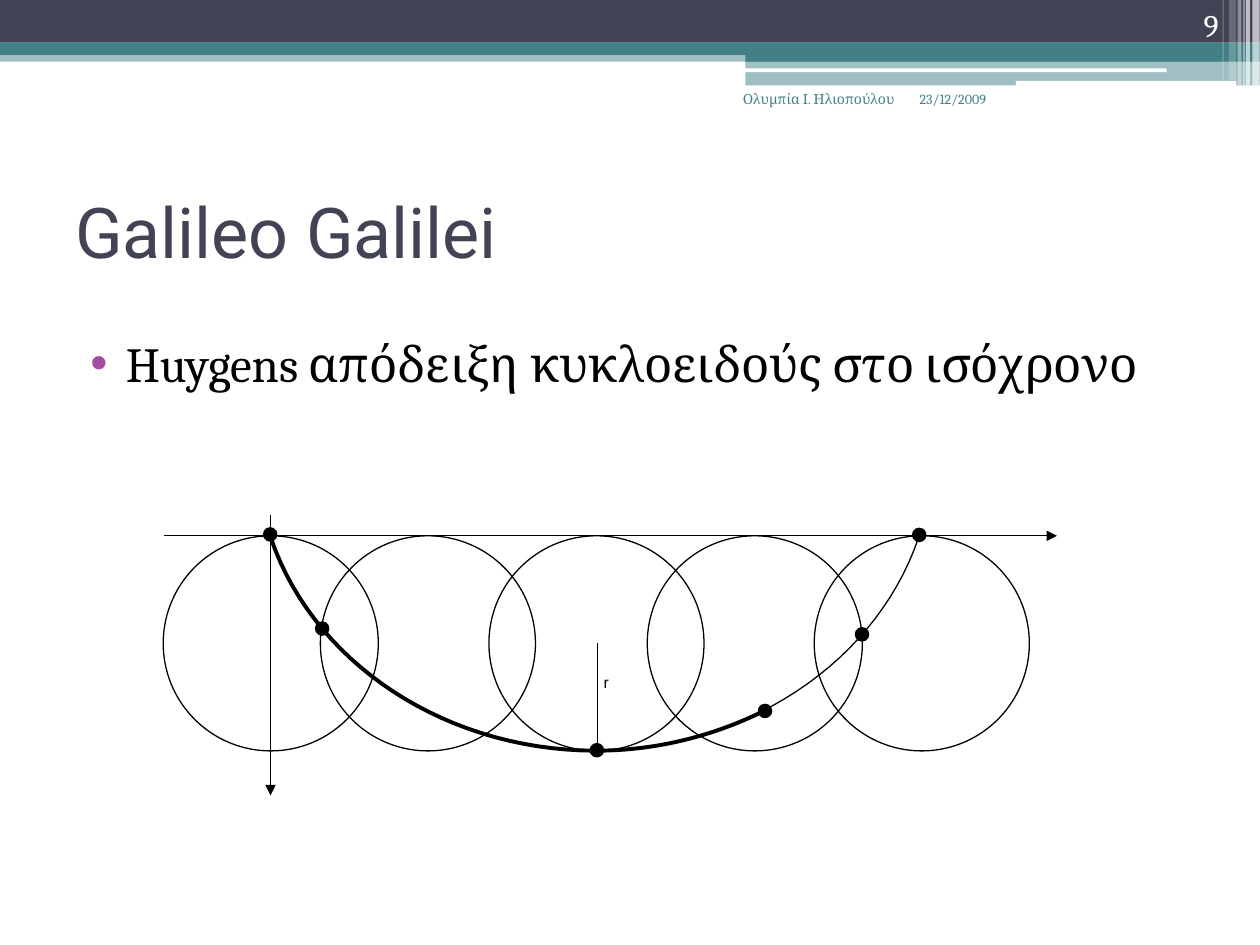
"""Build the Galileo Galilei slide with the cycloid drawing."""
from lxml import etree
from pptx import Presentation
from pptx.dml.color import RGBColor
from pptx.enum import shapes, text
from pptx.oxml.ns import qn
from pptx.util import Pt

MSO = shapes.MSO_SHAPE
ANC = text.MSO_ANCHOR
AL = text.PP_ALIGN
TEAL, NAVY, WHITE, BLACK = "438086", "424456", "FFFFFF", "000000"
rgb = RGBColor.from_string


def add_shape(kind, box, fill=None, alpha=100, line=None):
    """Add a preset shape with an optional fill, transparency and outline."""
    sp = s.shapes.add_shape(kind, *map(Pt, box))
    sp.shadow.inherit = False
    if fill:
        sp.fill.solid()
        sp.fill.fore_color.rgb = rgb(fill)
        if alpha < 100:
            clr = sp.fill._xPr.find(".//" + qn("a:srgbClr"))
            etree.SubElement(clr, qn("a:alpha")).set("val", str(alpha * 1000))
    else:
        sp.fill.background()
    if line:
        sp.line.color.rgb = rgb(line)
        sp.line.width = Pt(0.75)
    else:
        sp.line.fill.background()
    return sp


def add_text(box, words, size, font, color, align=AL.LEFT, anchor=ANC.TOP):
    """Add a wrapped text box with one run and return the box."""
    sp = s.shapes.add_textbox(*map(Pt, box))
    tf = sp.text_frame
    tf.word_wrap = True
    tf.vertical_anchor = anchor
    p = tf.paragraphs[0]
    p.alignment = align
    r = p.add_run()
    r.text = words
    r.font.size = Pt(size)
    r.font.name = font
    r.font.color.rgb = rgb(color)
    return sp


prs = Presentation()
prs.slide_width, prs.slide_height = Pt(720), Pt(540)
s = prs.slides.add_slide(prs.slide_layouts[6])

for box, color, alpha in [
    ((0, 28.8, 720, 6.5), TEAL, 50),
    ((0, 0, 720, 24.4), NAVY, 100),
    ((0, 24.2, 720, 7.2), TEAL, 100),
    ((426, 28.1, 294, 7.2), TEAL, 100),
    ((426, 34.6, 294, 14.2), TEAL, 50),
]:
    add_shape(MSO.RECTANGLE, box, color, alpha)

for box in [(425.5, 39.1, 241.2, 2.2), (580.5, 46.3, 126, 2.9)]:
    add_shape(MSO.ROUNDED_RECTANGLE, box, WHITE)

for x, w, h, alpha in [
    (715.6, 4.2, 49, 65), (712, 2.2, 49, 65), (710.5, 0.7, 49, 60),
    (707.2, 2.2, 49, 40), (702.2, 4.2, 46, 20), (698.6, 0.7, 46, 30),
]:
    add_shape(MSO.RECTANGLE, (x, 0, w, h), WHITE, alpha)

add_text((36, 90, 648, 84), "Galileo Galilei", 40, "Roboto", NAVY, anchor=ANC.MIDDLE)

sp = add_text((36, 177, 648, 340), "Huygens απόδειξη κυκλοειδούς στο ισόχρονο",
              28, "Cambria", BLACK)
p = sp.text_frame.paragraphs[0]
p.line_spacing = 1.3
p.space_before = Pt(3)
pPr = p._p.get_or_add_pPr()
pPr.set("marL", str(Pt(28.8)))
pPr.set("indent", str(Pt(-20.2)))
bullet_color = etree.SubElement(pPr, qn("a:buClr"))
etree.SubElement(bullet_color, qn("a:srgbClr")).set("val", "A04DA3")
etree.SubElement(pPr, qn("a:buFont")).set("typeface", "Arial")
etree.SubElement(pPr, qn("a:buChar")).set("char", "•")

add_text((518.4, 48.2, 75.6, 36), "23/12/2009", 8, "Cambria", TEAL)
add_text((414, 48.2, 104.4, 36), "Ολυμπία Ι. Ηλιοπούλου", 8, "Cambria", TEAL, AL.RIGHT)
add_text((643.7, 0, 59.8, 28.8), "9", 18, "Cambria", WHITE, AL.RIGHT, ANC.BOTTOM)

for x1, y1, x2, y2, arrow in [
    (93.6, 306.2, 604, 306.2, True),
    (154.6, 294.5, 154.6, 454.5, True),
    (341.3, 427.7, 341.3, 367.2, False),
]:
    cn = s.shapes.add_connector(shapes.MSO_CONNECTOR.STRAIGHT, *map(Pt, (x1, y1, x2, y2)))
    cn.line.color.rgb = rgb(BLACK)
    cn.line.width = Pt(0.75)
    if arrow:
        etree.SubElement(cn.line._get_or_add_ln(), qn("a:tailEnd")).set("type", "triangle")
    etree.SubElement(cn._element.spPr, qn("a:effectLst"))

for x in (93.3, 183.1, 279.4, 369.9, 465.3):
    add_shape(MSO.OVAL, (x, 306.2, 122.9, 122.9), line=BLACK)

steps = 30
for width, beziers in [
    (0.75, [[(524.9, 307.4), (500.4, 379.4), (424.8, 429), (339.6, 429)],
            [(339.6, 429), (254.2, 429), (178.6, 379.4), (154.3, 307.4)]]),
    (2.25, [[(435.6, 406.8), (406.1, 421.2), (373.7, 429), (340.6, 429)],
            [(340.6, 429), (254.9, 429), (179.3, 379.4), (154.8, 307.4)]]),
]:
    points = []
    for a, b, c, d in beziers:
        for t in (i / steps for i in range(steps + 1)):
            points.append(tuple(
                Pt((1 - t) ** 3 * a[k] + 3 * t * (1 - t) ** 2 * b[k]
                   + 3 * t * t * (1 - t) * c[k] + t ** 3 * d[k]) for k in (0, 1)))
    builder = s.shapes.build_freeform(*points[0])
    builder.add_line_segments(points[1:], close=False)
    curve = builder.convert_to_shape()
    curve.shadow.inherit = False
    curve.fill.background()
    curve.line.color.rgb = rgb(BLACK)
    curve.line.width = Pt(width)

tf = add_text((342, 381.6, 69.1, 25.9), "r", 9, "Arial", BLACK).text_frame
tf.margin_left = tf.margin_right = tf.margin_top = tf.margin_bottom = Pt(2.9)

dot = 7.6
for x, y in [(154.4, 305.4), (184.1, 359.2), (341.1, 428.7),
             (437.2, 406.3), (492.6, 362.5), (525.3, 305.7)]:
    add_shape(MSO.OVAL, (x - dot / 2, y - dot / 2, dot, dot), BLACK, line=BLACK)

prs.save("out.pptx")
